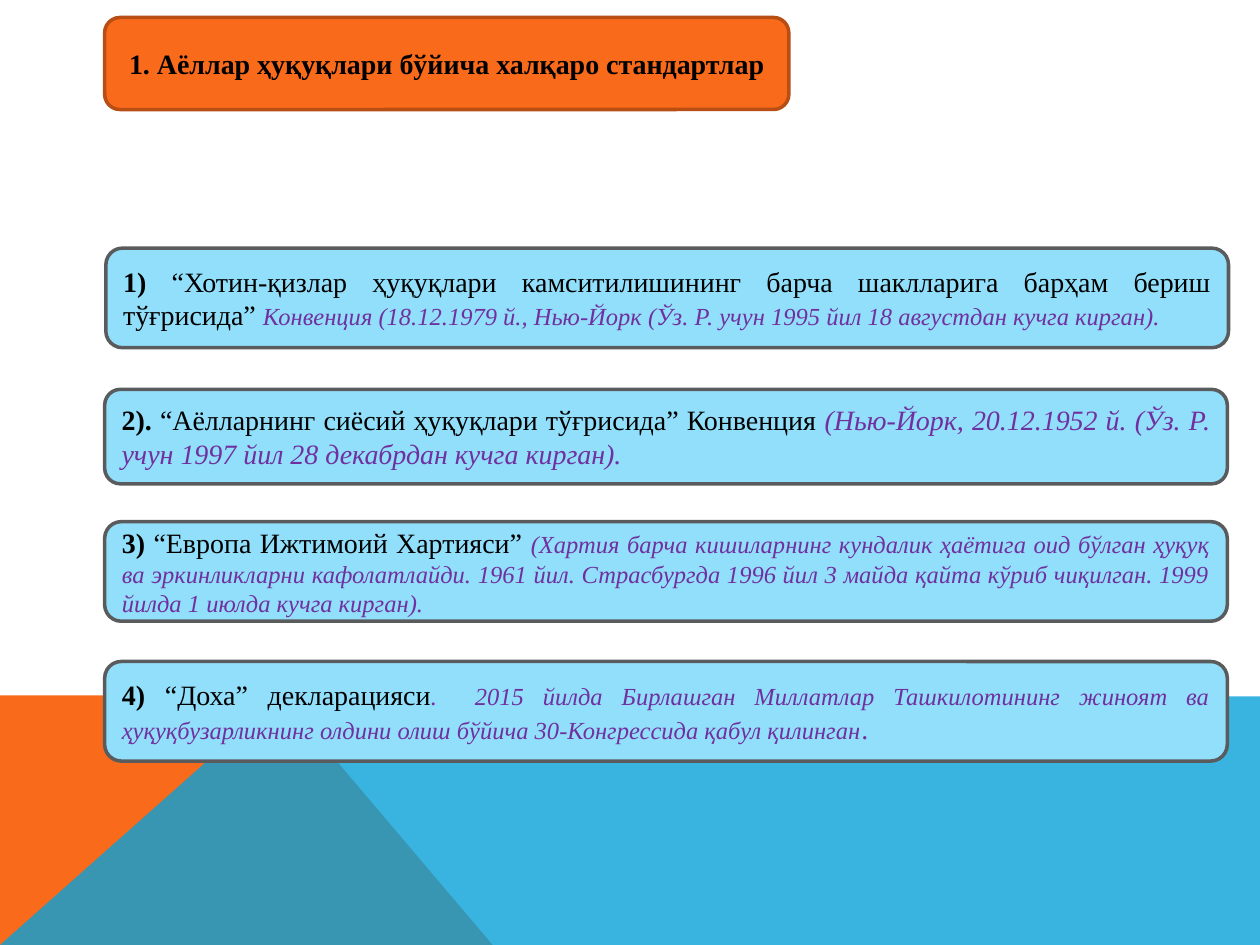
from pptx import Presentation
from pptx.dml.color import RGBColor
from pptx.enum.shapes import MSO_SHAPE
from pptx.enum.text import MSO_ANCHOR, PP_ALIGN
from pptx.oxml.ns import qn
from pptx.util import Pt
from lxml.etree import SubElement

W, H = 720, 540
FONT = "Times New Roman"
BLACK, PURPLE = "000000", "7030A0"
ORANGE, BLUE, PALE = "F96A1B", "08A1D9", "91DFFB"
BAND_TOP, PEAK = 397.4, 160.6

BANDS = [
    ([(0, H), (0, BAND_TOP), (PEAK, BAND_TOP), (281.5, H)], ORANGE, 100),
    ([(0, H), (PEAK, BAND_TOP), (W, BAND_TOP + 0.6), (W, H)], BLUE, 80),
]

HEAD = (16, BLACK, True, False)
NAME = (16, BLACK, False, False)
NOTE = (14, PURPLE, False, True)
BIG_NOTE = (16, PURPLE, False, True)
STOP = (16, PURPLE, False, False)

TITLE = ((59.8, 10, 391, 52.6),
         [("1. Аёллар ҳуқуқлари бўйича халқаро стандартлар", HEAD)])

DOCUMENTS = [
    ((60.5, 141.8, 641.5, 56.9), [
        ("1)", HEAD),
        (" “Хотин-қизлар ҳуқуқлари камситилишининг барча шаклларига барҳам бериш тўғрисида” ", NAME),
        ("Конвенция (18.12.1979 й., Нью-Йорк (Ўз. Р. учун 1995 йил 18 августдан кучга кирган).", NOTE)]),
    ((59.8, 222.5, 641.5, 54), [
        ("2). ", HEAD),
        ("“Аёлларнинг сиёсий ҳуқуқлари тўғрисида” Конвенция ", NAME),
        ("(Нью-Йорк, 20.12.1952 й. (Ўз. Р. учун 1997 йил 28 декабрдан кучга кирган).", BIG_NOTE)]),
    ((59.8, 298.1, 641.5, 56.9), [
        ("3) ", HEAD),
        ("“Европа Ижтимоий Хартияси” ", NAME),
        ("(Хартия барча кишиларнинг кундалик ҳаётига оид бўлган ҳуқуқ ва эркинликларни "
         "кафолатлайди. 1961 йил. Страсбургда 1996 йил 3 майда қайта кўриб чиқилган. "
         "1999 йилда 1 июлда кучга кирган).", NOTE)]),
    ((59.8, 378, 641.5, 56.9), [
        ("4)", HEAD),
        (" “Доха” декларацияси", NAME),
        (".  2015 йилда Бирлашган Миллатлар Ташкилотининг жиноят ва ҳуқуқбузарликнинг "
         "олдини олиш бўйича 30-Конгрессида қабул қилинган", NOTE),
        (".", STOP)]),
]


def rgb(color):
    return RGBColor.from_string(color)


def fill(sp, color):
    sp.shadow.inherit = False
    sp.fill.solid()
    sp.fill.fore_color.rgb = rgb(color)


def add_band(s, points, color, opacity):
    (x, y), *rest = [(Pt(x), Pt(y)) for x, y in points]
    builder = s.shapes.build_freeform(x, y)
    builder.add_line_segments(rest, close=True)
    sp = builder.convert_to_shape()
    fill(sp, color)
    sp.line.fill.background()
    if opacity < 100:
        clr = sp.fill._xPr.find(qn("a:solidFill"))[0]
        SubElement(clr, qn("a:alpha")).set("val", str(opacity * 1000))


def add_box(s, box, runs, color, border, align):
    sp = s.shapes.add_shape(MSO_SHAPE.ROUNDED_RECTANGLE, *map(Pt, box))
    fill(sp, color)
    sp.line.color.rgb = rgb(border)
    sp.line.width = Pt(2)
    tf = sp.text_frame
    tf.word_wrap = True
    tf.vertical_anchor = MSO_ANCHOR.MIDDLE
    p = tf.paragraphs[0]
    p.alignment = align
    p.font.name = FONT
    for text, (size, ink, bold, italic) in runs:
        r = p.add_run()
        r.text = text
        r.font.name = FONT
        r.font.size = Pt(size)
        r.font.bold = bold
        r.font.italic = italic
        r.font.color.rgb = rgb(ink)


def main():
    prs = Presentation()
    prs.slide_width, prs.slide_height = Pt(W), Pt(H)
    s = prs.slides.add_slide(prs.slide_layouts[6])
    for band in BANDS:
        add_band(s, *band)
    add_box(s, *TITLE, ORANGE, "B84E14", PP_ALIGN.CENTER)
    for box, runs in DOCUMENTS:
        add_box(s, box, runs, PALE, "5A5B5D", PP_ALIGN.JUSTIFY)
    prs.save("out.pptx")


if __name__ == "__main__":
    main()
